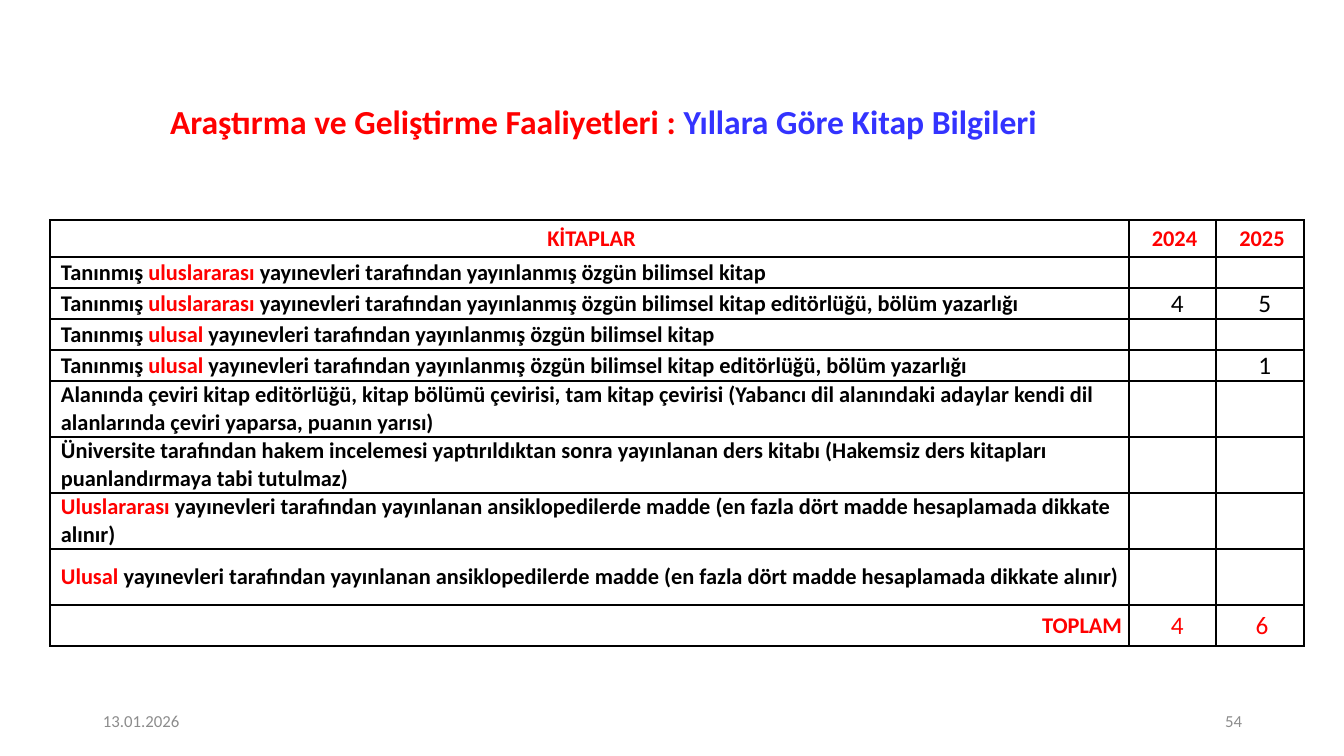
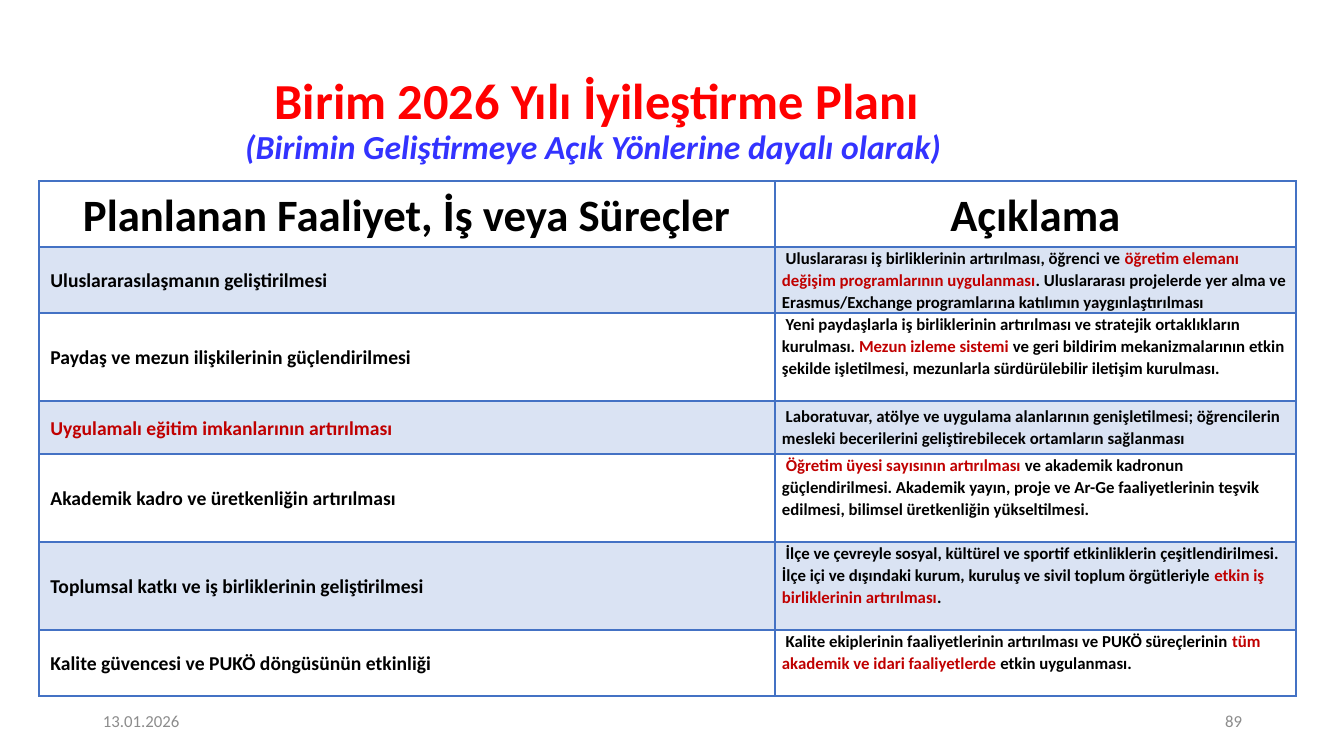
"""Build two report slides: yearly book figures and the 2026 improvement plan."""
from lxml.etree import SubElement
from pptx import Presentation
from pptx.dml.color import RGBColor
from pptx.enum.text import MSO_ANCHOR, MSO_AUTO_SIZE, PP_ALIGN
from pptx.oxml.ns import qn
from pptx.util import Emu, Pt

COLORS = {"red": "FF0000", "blue": "3333FF", "dark_red": "C00000", "black": "000000",
          "gray": "8C8C8C", "line": "4472C4", "band": "DAE3F3"}
FONT = "Calibri"
DATE = "13.01.2026"
LEFT, CENTER, RIGHT = PP_ALIGN.LEFT, PP_ALIGN.CENTER, PP_ALIGN.RIGHT
TOP, MIDDLE = MSO_ANCHOR.TOP, MSO_ANCHOR.MIDDLE

BOOK_TITLE = [[
    ("Araştırma ve Geliştirme Faaliyetleri : ", {"size": 24, "bold": True, "color": "red"}),
    ("Yıllara Göre Kitap Bilgileri", {"size": 24, "bold": True, "color": "blue"}),
]]
BOOK_HEADER = ("KİTAPLAR", "2024", "2025")
BOOK_ROWS = [
    ("Tanınmış *uluslararası* yayınevleri tarafından yayınlanmış özgün bilimsel kitap", "", ""),
    ("Tanınmış *uluslararası* yayınevleri tarafından yayınlanmış özgün bilimsel kitap "
     "editörlüğü, bölüm yazarlığı", " 4", " 5"),
    ("Tanınmış *ulusal* yayınevleri tarafından yayınlanmış özgün bilimsel kitap", "", ""),
    ("Tanınmış *ulusal* yayınevleri tarafından yayınlanmış özgün bilimsel kitap "
     "editörlüğü, bölüm yazarlığı", "", " 1"),
    ("Alanında çeviri kitap editörlüğü, kitap bölümü çevirisi, tam kitap çevirisi (Yabancı dil "
     "alanındaki adaylar kendi dil alanlarında çeviri yaparsa, puanın yarısı)", "", ""),
    ("Üniversite tarafından hakem incelemesi yaptırıldıktan sonra yayınlanan ders kitabı "
     "(Hakemsiz ders kitapları puanlandırmaya tabi tutulmaz)", "", ""),
    ("*Uluslararası* yayınevleri tarafından yayınlanan ansiklopedilerde madde "
     "(en fazla dört madde hesaplamada dikkate alınır)", "", ""),
    ("*Ulusal* yayınevleri tarafından yayınlanan ansiklopedilerde madde "
     "(en fazla dört madde hesaplamada dikkate alınır)", "", ""),
]
BOOK_TOTAL = ("TOPLAM", " 4", "6")
BOOK_COLUMNS = [1079, 87, 88]
BOOK_HEIGHTS = [37] + [31] * 4 + [56] * 4 + [41]

PLAN_TITLE = [
    [("Birim 2026 Yılı İyileştirme Planı", {"size": 36, "bold": True, "color": "red"})],
    [("(Birimin Geliştirmeye Açık Yönlerine dayalı olarak) ",
      {"size": 24, "bold": True, "italic": True, "color": "blue"})],
]
PLAN_HEADER = ("Planlanan Faaliyet, İş veya Süreçler", "Açıklama")
PLAN_ROWS = [
    (66, TOP, " Uluslararasılaşmanın geliştirilmesi",
     " Uluslararası iş birliklerinin artırılması, öğrenci ve *öğretim elemanı değişim "
     "programlarının uygulanması*. Uluslararası projelerde yer alma ve Erasmus/Exchange "
     "programlarına katılımın yaygınlaştırılması"),
    (88, TOP, " Paydaş ve mezun ilişkilerinin güçlendirilmesi",
     " Yeni paydaşlarla iş birliklerinin artırılması ve stratejik ortaklıkların kurulması. "
     "*Mezun izleme sistemi *ve geri bildirim mekanizmalarının etkin şekilde işletilmesi, "
     "mezunlarla sürdürülebilir iletişim kurulması."),
    (53, MIDDLE, " *Uygulamalı eğitim imkanlarının artırılması*",
     " Laboratuvar, atölye ve uygulama alanlarının genişletilmesi; öğrencilerin mesleki "
     "becerilerini geliştirebilecek ortamların sağlanması"),
    (88, TOP, " Akademik kadro ve üretkenliğin artırılması",
     " *Öğretim üyesi sayısının artırılması *ve akademik kadronun güçlendirilmesi. Akademik "
     "yayın, proje ve Ar-Ge faaliyetlerinin teşvik edilmesi, bilimsel üretkenliğin "
     "yükseltilmesi."),
    (88, TOP, " Toplumsal katkı ve iş birliklerinin geliştirilmesi",
     " İlçe ve çevreyle sosyal, kültürel ve sportif etkinliklerin çeşitlendirilmesi. İlçe içi "
     "ve dışındaki kurum, kuruluş ve sivil toplum örgütleriyle *etkin iş birliklerinin "
     "artırılması*."),
    (66, TOP, " Kalite güvencesi ve PUKÖ döngüsünün etkinliği",
     " Kalite ekiplerinin faaliyetlerinin artırılması ve PUKÖ süreçlerinin *tüm akademik ve "
     "idari faaliyetlerde *etkin uygulanması."),
]
PLAN_COLUMNS = [736, 521]
PLAN_HEADER_HEIGHT = 66


def px(length):
    return Emu(round(length * 914400 / 100.8))


def add_span(para, text, style):
    span = para.add_run()
    span.text = text
    values = {"name": FONT, "bold": False, "italic": False, **style}
    values["size"] = Pt(values["size"])
    span.font.color.rgb = RGBColor.from_string(COLORS[values.pop("color")])
    for name, value in values.items():
        setattr(span.font, name, value)


def add_page(deck, title, title_area, number):
    page = deck.slides.add_slide(deck.slide_layouts[5])
    box = page.shapes.title
    box.left, box.top, box.width, box.height = map(px, title_area)
    frame = box.text_frame
    frame.auto_size = MSO_AUTO_SIZE.NONE
    frame.vertical_anchor = MIDDLE
    for index, spans in enumerate(title):
        para = frame.add_paragraph() if index else frame.paragraphs[0]
        para.alignment, para.line_spacing = CENTER, 0.9
        for text, style in spans:
            add_span(para, text, style)
    for text, left, align in ((DATE, 93, LEFT), (number, 950, RIGHT)):
        footer = page.shapes.add_textbox(px(left), px(701), px(302), px(40)).text_frame
        footer.word_wrap = True
        footer.vertical_anchor = MIDDLE
        footer.paragraphs[0].alignment = align
        add_span(footer.paragraphs[0], text, {"size": 12, "color": "gray"})
    return page


def add_grid(page, left, top, columns, heights):
    frame = page.shapes.add_table(len(heights), len(columns), px(left), px(top),
                                  px(sum(columns)), px(sum(heights)))
    table = frame.table
    table.first_row = table.horz_banding = False
    for column, width in zip(table.columns, columns):
        column.width = px(width)
    for row, height in zip(table.rows, heights):
        row.height = px(height)
    return table


def set_borders(cell, color, top=1, bottom=1):
    properties = cell._tc.get_or_add_tcPr()
    for side, width in (("L", 1), ("R", 1), ("T", top), ("B", bottom)):
        line = SubElement(properties, qn(f"a:ln{side}"), w=str(Pt(width)))
        fill = SubElement(line, qn("a:solidFill"))
        SubElement(fill, qn("a:srgbClr"), val=COLORS[color])


def fill_cell(cell, text, style, accent="red", align=LEFT, anchor=MIDDLE,
              indent=7, spacing=1.0, fill=None):
    cell.margin_left, cell.margin_right = px(indent), px(7)
    cell.margin_top = cell.margin_bottom = 0
    cell.vertical_anchor = anchor
    if fill:
        cell.fill.solid()
        cell.fill.fore_color.rgb = RGBColor.from_string(COLORS[fill])
    else:
        cell.fill.background()
    para = cell.text_frame.paragraphs[0]
    para.alignment, para.line_spacing = align, spacing
    for index, part in enumerate(text.split("*")):
        if part:
            add_span(para, part, {**style, "color": accent} if index % 2 else style)


def add_book_page(deck):
    page = add_page(deck, BOOK_TITLE, (28, 91, 1151, 66), "54")
    table = add_grid(page, 50, 220, BOOK_COLUMNS, BOOK_HEIGHTS)
    rows = [BOOK_HEADER, *BOOK_ROWS, BOOK_TOTAL]
    last = len(rows) - 1
    for row, texts in enumerate(rows):
        for column, text in enumerate(texts):
            label = row == 0 or column == 0
            style = {"size": 16 if label else 18, "bold": label,
                     "color": "red" if row in (0, last) else "black"}
            align = CENTER
            if column == 0 and row:
                align = RIGHT if row == last else LEFT
            cell = table.cell(row, column)
            set_borders(cell, "black")
            fill_cell(cell, text, style, align=align, indent=11)


def add_plan_page(deck):
    page = add_page(deck, PLAN_TITLE, (30, 79, 1134, 85), "89")
    heights = [PLAN_HEADER_HEIGHT] + [height for height, *_ in PLAN_ROWS]
    table = add_grid(page, 39, 181, PLAN_COLUMNS, heights)
    for column, text in enumerate(PLAN_HEADER):
        cell = table.cell(0, column)
        set_borders(cell, "line", bottom=2)
        fill_cell(cell, text, {"size": 32, "bold": True, "color": "black"},
                  align=CENTER, spacing=1.07)
    for row, (_, anchor, activity, detail) in enumerate(PLAN_ROWS, 1):
        parts = ((activity, 14, MIDDLE), (detail, 12, anchor))
        for column, (text, size, place) in enumerate(parts):
            cell = table.cell(row, column)
            set_borders(cell, "line", top=2 if row == 1 else 1)
            fill_cell(cell, text, {"size": size, "bold": True, "color": "black"},
                      accent="dark_red", anchor=place, spacing=1.07,
                      fill="band" if row % 2 else None)


def main():
    deck = Presentation()
    deck.slide_width, deck.slide_height = px(1344), px(756)
    add_book_page(deck)
    add_plan_page(deck)
    deck.save("out.pptx")


if __name__ == "__main__":
    main()
